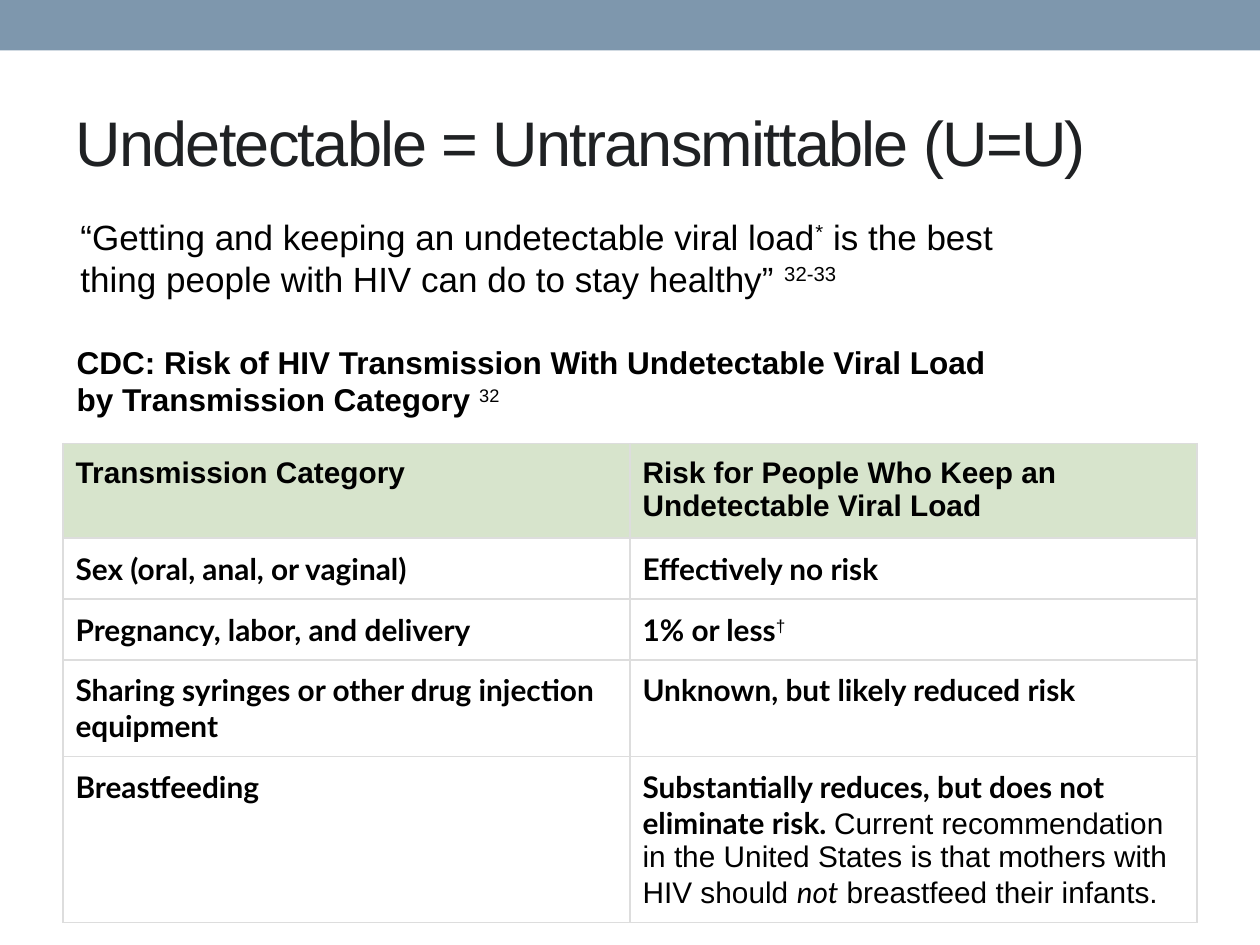
from lxml.etree import SubElement
from pptx import Presentation
from pptx.dml.color import RGBColor
from pptx.enum.shapes import MSO_SHAPE
from pptx.enum.text import MSO_ANCHOR, MSO_AUTO_SIZE, PP_ALIGN
from pptx.oxml.ns import qn
from pptx.util import Inches, Pt

COLORS = {
    "band": "7E97AD",
    "title": "1F2123",
    "text": "000000",
    "head": "D7E4CC",
    "body": "FFFFFF",
    "rule": "DDDDDD",
}

# A run is (text, marks): b bold, i italic, s superscript, l Lato
QUOTE = [
    ("“Getting and keeping an undetectable viral load", ""),
    ("*", "s"),
    (" is the best thing people with HIV can do to stay healthy” ", ""),
    ("32-33", "s"),
]
CAPTION = [
    ("CDC: Risk of HIV Transmission With Undetectable Viral Load "
     "by Transmission Category ", "b"),
    ("32", "s"),
]
ROWS = [
    ([("Transmission Category", "b")],
     [("Risk for People Who Keep an Undetectable Viral Load", "b")]),
    ([("Sex (oral, anal, or vaginal)", "bl")],
     [("Effectively no risk", "bl")]),
    ([("Pregnancy, labor, and delivery", "bl")],
     [("1% or less", "bl"), ("†", "s")]),
    ([("Sharing syringes or other drug injection equipment", "bl")],
     [("Unknown, but likely reduced risk", "bl")]),
    ([("Breastfeeding", "bl")],
     [("Substantially reduces, but does not eliminate risk. ", "bl"),
      ("Current recommendation in the United States is that mothers "
       "with HIV should ", ""),
      ("not", "il"),
      (" breastfeed their infants.", "")]),
]
HEIGHTS = [0.75, 0.47, 0.47, 0.75, 1.3]


def color(name):
    return RGBColor.from_string(COLORS[name])


def add_runs(frame, runs, size):
    para = frame.paragraphs[0]
    for text, marks in runs:
        run = para.add_run()
        run.text = text
        font = run.font
        font.size = Pt(size)
        font.name = "Lato" if "l" in marks else "Arial"
        font.bold = "b" in marks
        font.italic = "i" in marks
        font.color.rgb = color("text")
        if "s" in marks:
            run._r.get_or_add_rPr().set("baseline", "30000")


def add_band(slide):
    band = slide.shapes.add_shape(
        MSO_SHAPE.RECTANGLE, 0, 0, Inches(10), Inches(0.4))
    band.shadow.inherit = False
    band.fill.solid()
    band.fill.fore_color.rgb = color("band")
    band.line.fill.background()


def set_title(slide, text):
    title = slide.shapes.title
    title.left, title.top = Inches(0.5), Inches(0.58)
    title.width, title.height = Inches(9), Inches(1.08)
    frame = title.text_frame
    frame.text = text
    frame.auto_size = MSO_AUTO_SIZE.NONE
    frame.vertical_anchor = MSO_ANCHOR.MIDDLE
    para = frame.paragraphs[0]
    para.alignment = PP_ALIGN.LEFT
    run = para.runs[0]
    run.font.size = Pt(36)
    run.font.name = "Arial"
    run.font.color.rgb = color("title")
    run._r.get_or_add_rPr().set("spc", "-100")


def add_text(slide, left, top, width, height, runs, size):
    box = slide.shapes.add_textbox(
        Inches(left), Inches(top), Inches(width), Inches(height))
    frame = box.text_frame
    frame.word_wrap = True
    frame.auto_size = MSO_AUTO_SIZE.SHAPE_TO_FIT_TEXT
    add_runs(frame, runs, size)


def set_borders(cell):
    props = cell._tc.get_or_add_tcPr()
    for spot, side in enumerate(("lnL", "lnR", "lnT", "lnB")):
        line = SubElement(props, qn(f"a:{side}"), w=str(Pt(0.75)))
        fill = SubElement(line, qn("a:solidFill"))
        SubElement(fill, qn("a:srgbClr"), val=COLORS["rule"])
        props.insert(spot, line)  # borders come before the fill


def fill_cell(cell, runs, shade):
    cell.margin_left = cell.margin_right = Inches(0.1)
    cell.margin_top = cell.margin_bottom = Inches(0.1)
    cell.fill.solid()
    cell.fill.fore_color.rgb = color(shade)
    set_borders(cell)
    add_runs(cell.text_frame, runs, 17)


def add_risks(slide):
    table = slide.shapes.add_table(
        len(ROWS), 2, Inches(0.5), Inches(3.52),
        Inches(9), Inches(sum(HEIGHTS))).table
    for r, (row, height) in enumerate(zip(ROWS, HEIGHTS)):
        table.rows[r].height = Inches(height)
        for c, runs in enumerate(row):
            fill_cell(table.cell(r, c), runs, "body" if r else "head")


def main():
    deck = Presentation()
    deck.slide_width, deck.slide_height = Inches(10), Inches(7.5)
    slide = deck.slides.add_slide(deck.slide_layouts[5])

    # Heading
    add_band(slide)
    set_title(slide, "Undetectable = Untransmittable (U=U)")

    # Risk table with its caption and the quote above
    add_risks(slide)
    add_text(slide, 0.51, 2.67, 7.58, 1.01, CAPTION, 18)
    add_text(slide, 0.54, 1.66, 7.55, 0.77, QUOTE, 20)

    deck.save("out.pptx")


if __name__ == "__main__":
    main()
